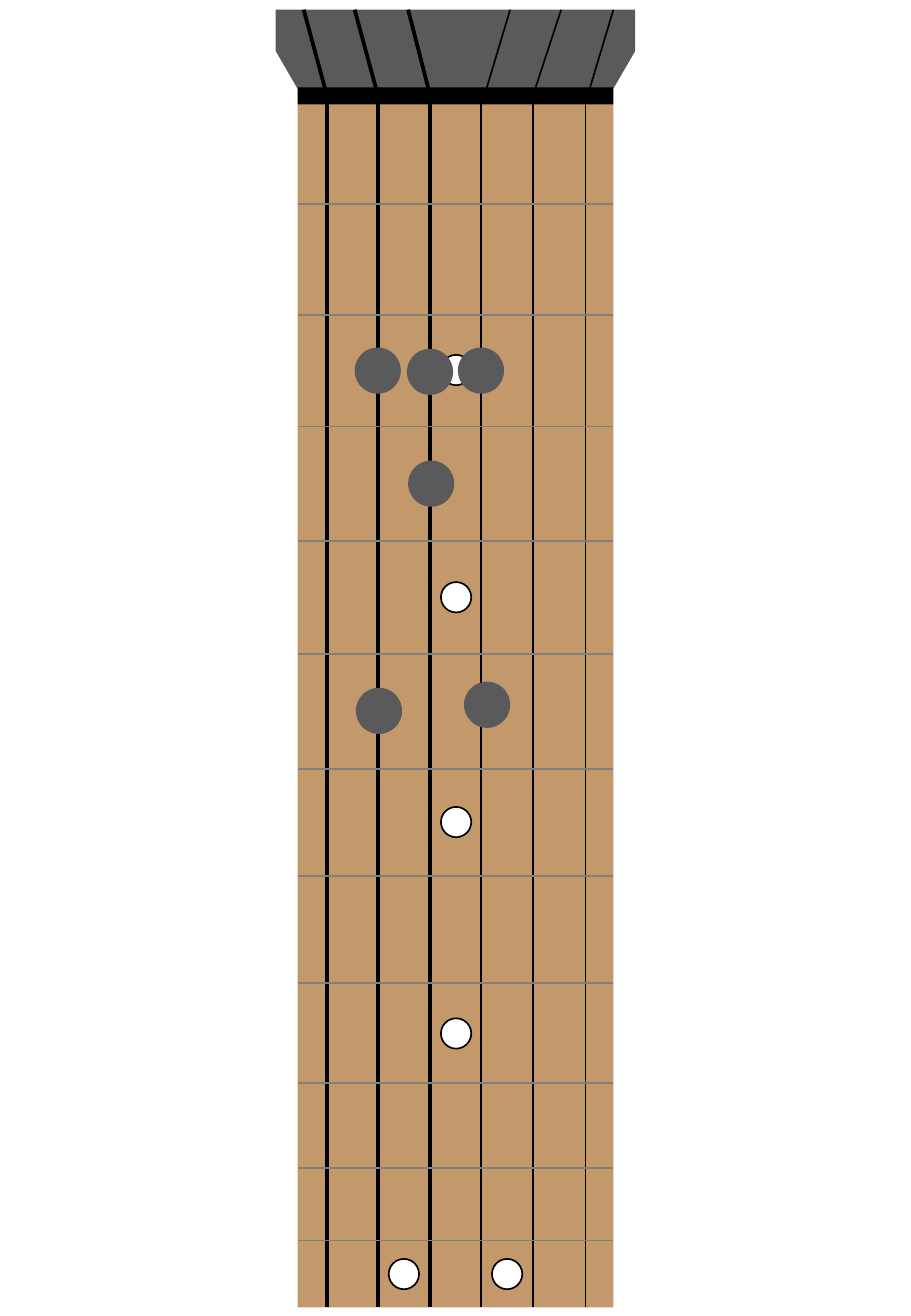
from lxml import etree
from pptx import Presentation
from pptx.dml.color import RGBColor
from pptx.enum.shapes import MSO_CONNECTOR, MSO_SHAPE
from pptx.oxml.ns import qn
from pptx.util import Inches, Pt

COLORS = {"wood": "C3996C", "head": "5A5A5C", "black": "000000",
          "fret": "808080", "white": "FFFFFF"}

deck = Presentation()
deck.slide_width, deck.slide_height = Inches(7.5), Inches(10.83)
page = deck.slides.add_slide(deck.slide_layouts[6])
guitar = page.shapes.add_group_shape().shapes


def add_filled(shapes, kind, left, top, width, height, fill, outline=None):
    shape = shapes.add_shape(kind, Inches(left), Inches(top), Inches(width), Inches(height))
    shape.shadow.inherit = False
    shape.fill.solid()
    shape.fill.fore_color.rgb = RGBColor.from_string(COLORS[fill])
    if outline:
        shape.line.color.rgb = RGBColor.from_string(COLORS[outline])
        shape.line.width = Pt(1)
    else:
        shape.line.fill.background()


def add_line(start, end, color, weight):
    line = guitar.add_connector(MSO_CONNECTOR.STRAIGHT, *map(Inches, start + end))
    line.line.color.rgb = RGBColor.from_string(COLORS[color])
    line.line.width = Pt(weight)
    etree.SubElement(line._element.spPr, qn("a:effectLst"))


# Fretboard
neck_left, neck_right, neck_top, neck_bottom = 2.45, 5.05, 0.85, 10.76
neck_width = neck_right - neck_left
add_filled(guitar, MSO_SHAPE.RECTANGLE, neck_left, neck_top, neck_width,
           neck_bottom - neck_top, "wood")

# Headstock and nut
head_points = [(2.27, 0.08), (5.23, 0.08), (5.23, 0.42), (neck_right, 0.73),
               (neck_left, 0.73), (2.27, 0.42)]
corners = [(Inches(x), Inches(y)) for x, y in head_points]
outline = guitar.build_freeform(*corners[0])
outline.add_line_segments(corners[1:], close=True)
headstock = outline.convert_to_shape()
headstock.shadow.inherit = False
headstock.fill.solid()
headstock.fill.fore_color.rgb = RGBColor.from_string(COLORS["head"])
headstock.line.fill.background()
add_filled(guitar, MSO_SHAPE.RECTANGLE, neck_left, 0.72, neck_width, 0.14, "black")

# Strings: x on the neck, x at the top and at the nut of the headstock, weight
strings = [(2.69, 2.50, 2.69, 2.25), (3.11, 2.92, 3.11, 2.25), (3.54, 3.36, 3.54, 2.25),
           (3.96, 4.20, 3.99, 1), (4.39, 4.62, 4.39, 1), (4.82, 5.05, 4.84, 1)]
for neck_x, top_x, nut_x, weight in strings:
    add_line((neck_x, neck_top), (neck_x, neck_bottom), "black", weight)
    add_line((top_x, 0.08), (nut_x, 0.78), "black", weight)

# Frets
for y in (1.68, 2.59, 3.51, 4.45, 5.38, 6.33, 7.21, 8.09, 8.91, 9.61, 10.21):
    add_line((neck_right, y), (neck_left, y), "fret", 1)

# Position markers
for left, top in ((3.63, 2.92), (3.63, 4.79), (3.63, 6.64), (3.63, 8.38),
                  (3.2, 10.36), (4.05, 10.36)):
    add_filled(guitar, MSO_SHAPE.OVAL, left, top, 0.25, 0.25, "white", "black")

# Finger positions
for left, top in ((2.92, 2.86), (2.93, 5.66), (3.35, 2.87), (3.36, 3.79),
                  (3.77, 2.86), (3.82, 5.61)):
    add_filled(page.shapes, MSO_SHAPE.OVAL, left, top, 0.38, 0.38, "head")

deck.save("out.pptx")
